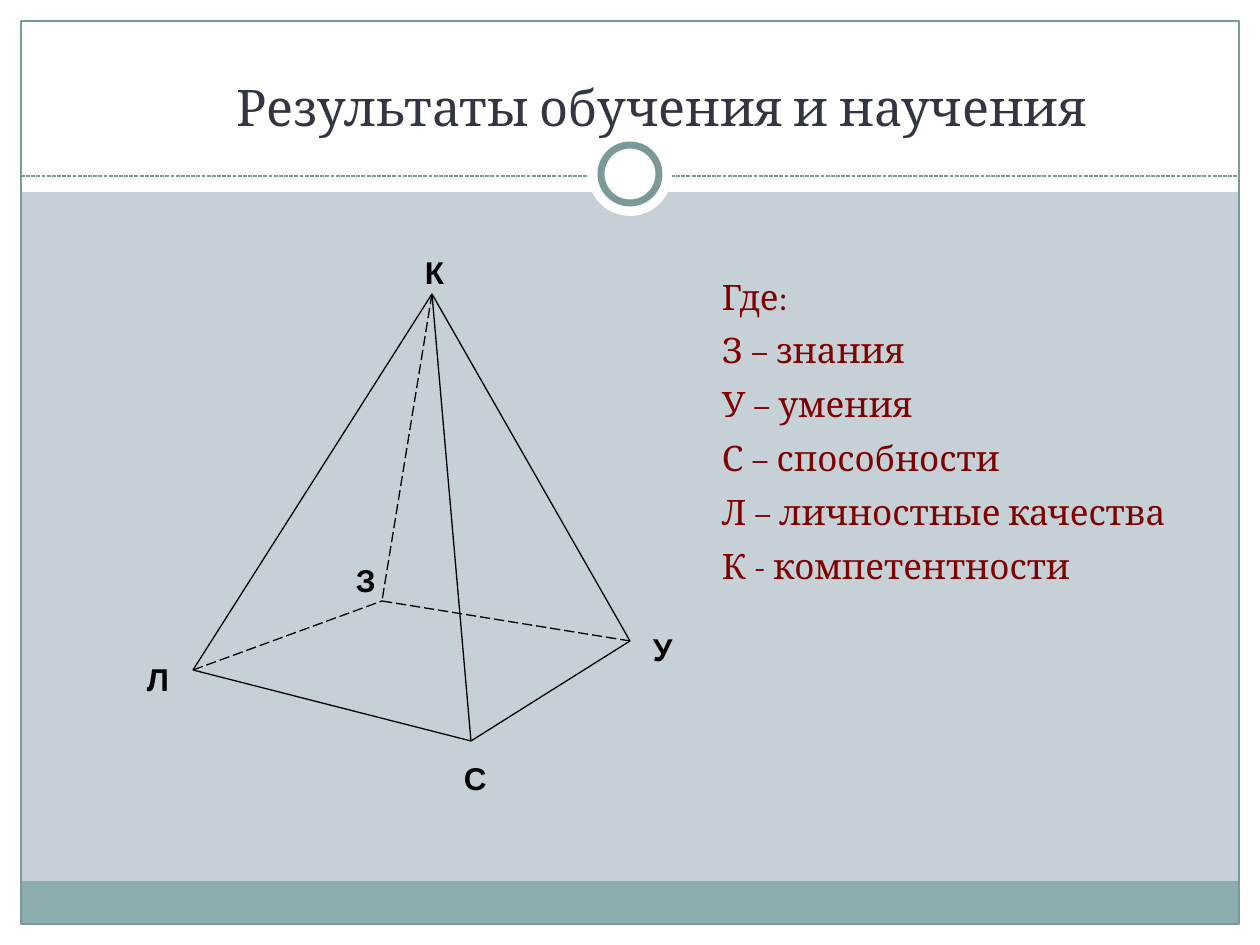
"""Build a slide with a pyramid of learning results and its legend."""
from lxml import etree
from pptx import Presentation
from pptx import util as u
from pptx.dml.color import RGBColor
from pptx.enum import dml, shapes, text
from pptx.oxml.ns import qn

PX = 914400 / 126
WIDTH, HEIGHT, EDGE = 1260, 945, 21
WHITE, TEAL, BLACK = "FFFFFF", "7C999A", "000000"
RECTANGLE, OVAL = shapes.MSO_SHAPE.RECTANGLE, shapes.MSO_SHAPE.OVAL
DASH = dml.MSO_LINE

TITLE = "Результаты обучения и научения"
LEGEND = ["Где:", "З – знания", "У – умения", "С – способности",
          "Л – личностные качества", "К - компетентности"]
BANDS = [
    ((0, HEIGHT - EDGE, WIDTH, EDGE), WHITE),
    ((0, 0, WIDTH, 192), WHITE),
    ((0, 0, EDGE, HEIGHT), WHITE),
    ((WIDTH - EDGE, 0, EDGE, HEIGHT), WHITE),
    ((EDGE, 881, WIDTH - 2 * EDGE, 43), "8CADAE"),
]
VERTICES = {"К": (432, 294), "Л": (193, 670), "С": (471, 741),
            "У": (630, 641), "З": (382, 601)}
SOLID_EDGES = ["ЛС", "СУ", "КЛ", "КУ", "КС"]
HIDDEN_EDGES = ["КЗ", "ЛЗ", "ЗУ"]
LABELS = {"К": (412, 244, 49, 50), "С": (451, 750, 49, 50),
          "Л": (134, 651, 49, 50), "У": (640, 621, 49, 50),
          "З": (343, 552, 69, 50)}
LABEL_FORMAT = {"name": "Arial", "size": u.Pt(18), "bold": True}
LEGEND_FORMAT = {"name": "Cambria", "size": u.Pt(20)}
TITLE_FORMAT = {"name": "Cambria", "size": u.Pt(28.8)}


def emu(*lengths):
    """Turn px lengths into EMU."""
    return [round(length * PX) for length in lengths]


def paint(target, color):
    """Set a solid colour on a fill."""
    target.solid()
    target.fore_color.rgb = RGBColor.from_string(color)


def add_block(slide, kind, box, fill=None, line=None, weight=0.75):
    """Add a preset shape with an optional fill and outline."""
    shape = slide.shapes.add_shape(kind, *emu(*box))
    shape.shadow.inherit = False
    for target, color in ((shape.fill, fill), (shape.line.fill, line)):
        if color:
            paint(target, color)
        else:
            target.background()
    if line:
        shape.line.width = u.Pt(weight)


def add_line(slide, start, end, color=BLACK, dash=None):
    """Add a straight line without a shadow."""
    line = slide.shapes.add_connector(
        shapes.MSO_CONNECTOR.STRAIGHT, *emu(*start, *end))
    paint(line.line.fill, color)
    line.line.width = u.Pt(0.75)
    if dash:
        line.line.dash_style = dash
    etree.SubElement(line._element.spPr, qn("a:effectLst"))


def add_text(slide, box, lines, font, color, margins=(0, 0, 0, 0),
             anchor=text.MSO_ANCHOR.TOP, align=text.PP_ALIGN.LEFT, gap=0):
    """Add a text box with one paragraph for each line."""
    frame = slide.shapes.add_textbox(*emu(*box)).text_frame
    frame.word_wrap = True
    frame.vertical_anchor = anchor
    for side, margin in zip(("left", "top", "right", "bottom"), emu(*margins)):
        setattr(frame, f"margin_{side}", margin)
    frame.text = "\n".join(lines)
    for paragraph in frame.paragraphs:
        paragraph.alignment = align
        paragraph.space_after = u.Pt(gap)
        for run in paragraph.runs:
            run.font.color.rgb = RGBColor.from_string(color)
            for name, value in font.items():
                setattr(run.font, name, value)


def add_decoration(slide):
    """Draw the frame, the header rule and the ring."""
    for box, color in BANDS:
        add_block(slide, RECTANGLE, box, color)
    frame = (EDGE, EDGE, WIDTH - 2 * EDGE, HEIGHT - 2 * EDGE)
    add_block(slide, RECTANGLE, frame, line=TEAL)
    add_line(slide, (EDGE, 176), (WIDTH - EDGE, 176), TEAL, DASH.SQUARE_DOT)
    for size, line in ((84, None), (58, TEAL)):
        box = ((WIDTH - size) / 2, 174 - size / 2, size, size)
        add_block(slide, OVAL, box, WHITE, line, 4)


def add_pyramid(slide):
    """Draw the edges and the vertex labels."""
    for edges, dash in ((SOLID_EDGES, None), (HIDDEN_EDGES, DASH.LONG_DASH)):
        for start, end in edges:
            add_line(slide, VERTICES[start], VERTICES[end], dash=dash)
    for label, box in LABELS.items():
        add_text(slide, box, [label], LABEL_FORMAT, BLACK, (13, 9, 13, 0))


def main():
    """Build and save the presentation."""
    presentation = Presentation()
    presentation.slide_width, presentation.slide_height = emu(WIDTH, HEIGHT)
    slide = presentation.slides.add_slide(presentation.slide_layouts[6])
    paint(slide.background.fill, "C5D1D7")
    add_decoration(slide)
    add_text(slide, (63, 63, 1197, 74), [TITLE], TITLE_FORMAT, "323643",
             anchor=text.MSO_ANCHOR.BOTTOM, align=text.PP_ALIGN.CENTER)
    add_pyramid(slide)
    add_text(slide, (722, 275, 507, 370), LEGEND, LEGEND_FORMAT, "800000",
             gap=6.8)
    presentation.save("out.pptx")


if __name__ == "__main__":
    main()
